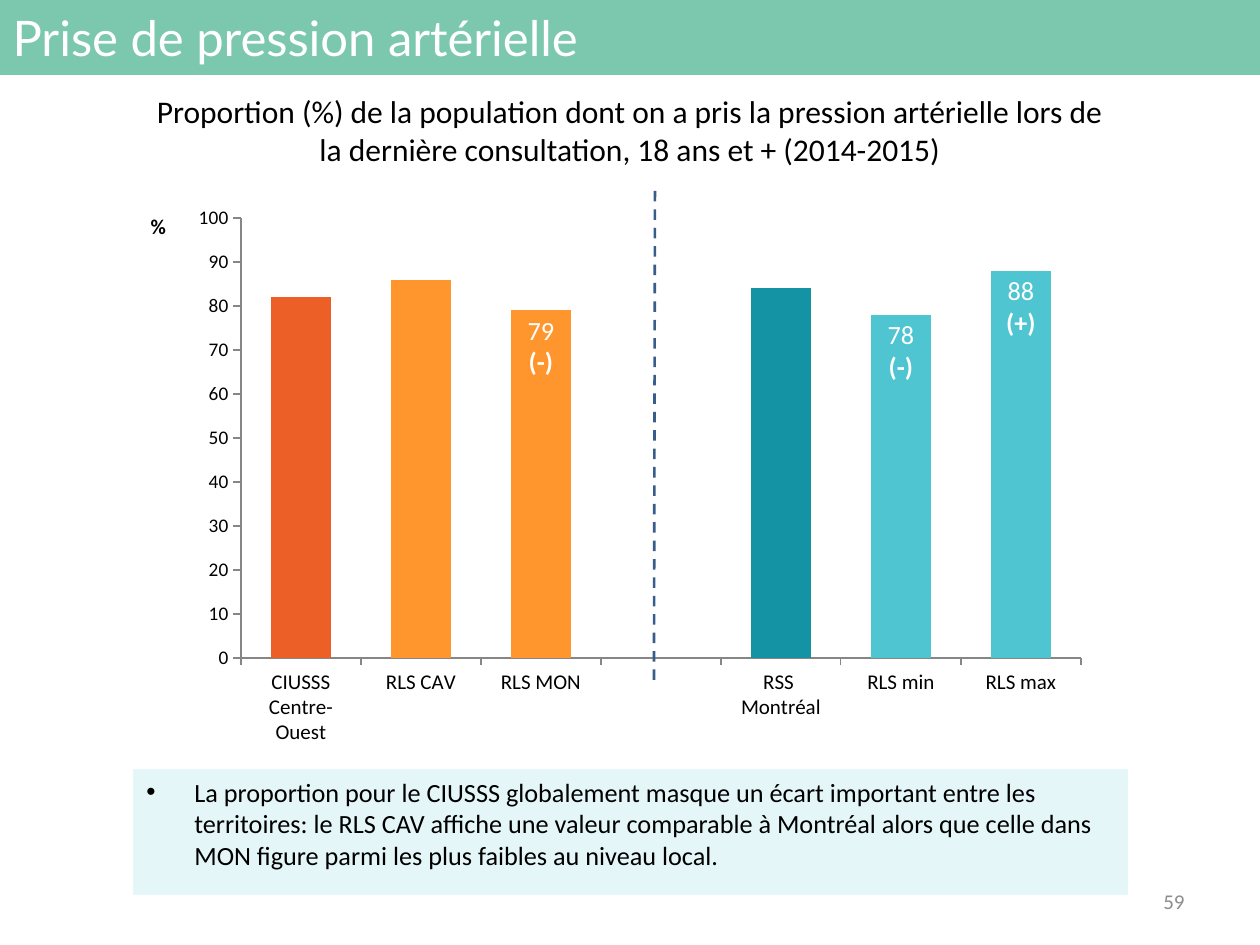
from lxml import etree
from pptx import Presentation
from pptx.chart.data import CategoryChartData
from pptx.dml.color import RGBColor
from pptx.enum.chart import XL_CHART_TYPE, XL_LABEL_POSITION, XL_TICK_MARK
from pptx.enum.dml import MSO_LINE
from pptx.enum.shapes import MSO_CONNECTOR, MSO_SHAPE
from pptx.enum.text import MSO_ANCHOR, PP_ALIGN
from pptx.oxml.ns import qn
from pptx.util import Emu, Pt

EMU_PER_PX = 914400 / 126

GREEN = RGBColor(0x7B, 0xC8, 0xAF)
PALE_BLUE = RGBColor(0xE4, 0xF6, 0xF8)
WHITE = RGBColor(0xFF, 0xFF, 0xFF)
BLACK = RGBColor(0x00, 0x00, 0x00)
GREY = RGBColor(0x8C, 0x8C, 0x8C)
AXIS_GREY = RGBColor(0x86, 0x86, 0x86)
NAVY = RGBColor(0x38, 0x5D, 0x8A)
RED_ORANGE = RGBColor(0xEC, 0x60, 0x28)
ORANGE = RGBColor(0xFF, 0x96, 0x2D)
TEAL = RGBColor(0x14, 0x93, 0xA4)
LIGHT_TEAL = RGBColor(0x4F, 0xC5, 0xD1)

# category, value, bar colour, significance mark
BARS = [
    ("CIUSSS\nCentre-Ouest", 82, RED_ORANGE, None),
    ("RLS CAV", 86, ORANGE, None),
    ("RLS MON", 79, ORANGE, "(-)"),
    ("", None, None, None),
    ("RSS \nMontréal", 84, TEAL, None),
    ("RLS min", 78, LIGHT_TEAL, "(-)"),
    ("RLS max", 88, LIGHT_TEAL, "(+)"),
]


def px(*values):
    return [Emu(round(v * EMU_PER_PX)) for v in values]


def style_font(font, size, color=BLACK, bold=False, name="Calibri"):
    for key, value in {"size": Pt(size), "bold": bold, "name": name}.items():
        setattr(font, key, value)
    font.color.rgb = color


def fill_box(s, color):
    s.fill.solid()
    s.fill.fore_color.rgb = color
    s.line.color.rgb = color
    s.line.width = Pt(0.75)


def write_lines(tf, lines, align, size, color=BLACK, name="Calibri"):
    tf.word_wrap = True
    for i, line in enumerate(lines):
        p = tf.paragraphs[0] if i == 0 else tf.add_paragraph()
        p.alignment = align
        r = p.add_run()
        r.text = line
        style_font(r.font, size, color, name=name)


def add_title(slide, box):
    s = slide.shapes.title
    s.left, s.top, s.width, s.height = px(*box)
    fill_box(s, GREEN)
    s.text_frame.vertical_anchor = MSO_ANCHOR.MIDDLE
    write_lines(s.text_frame, ["Prise de pression artérielle"],
                PP_ALIGN.LEFT, 28, WHITE, "Lato")


def add_text(slide, box, lines, align, size, color=BLACK, anchor=MSO_ANCHOR.TOP):
    tf = slide.shapes.add_textbox(*px(*box)).text_frame
    tf.vertical_anchor = anchor
    write_lines(tf, lines, align, size, color)


def add_comment(slide, box):
    s = slide.shapes.add_shape(MSO_SHAPE.RECTANGLE, *px(*box))
    s.shadow.inherit = False
    fill_box(s, PALE_BLUE)
    s.text_frame.vertical_anchor = MSO_ANCHOR.TOP
    write_lines(s.text_frame, [
        "La proportion pour le CIUSSS globalement masque un écart important "
        "entre les territoires: le RLS CAV affiche une valeur comparable à "
        "Montréal alors que celle dans MON figure parmi les plus faibles au "
        "niveau local."], PP_ALIGN.LEFT, 15)
    p = s.text_frame.paragraphs[0]
    p.space_before, p.space_after = Pt(4), Pt(10)
    indent, = px(48)
    pPr = p._p.get_or_add_pPr()
    pPr.set("marL", str(indent))
    pPr.set("indent", str(-indent))
    etree.SubElement(pPr, qn("a:buFont"), typeface="Arial")
    etree.SubElement(pPr, qn("a:buChar"), char="•")


def set_layout(parent, box, values, inner=False):
    """Place a chart part at values (px) inside the chart box, after its tx if any."""
    for old in parent.findall(qn("c:layout")):
        parent.remove(old)
    layout = etree.Element(qn("c:layout"))
    manual = etree.SubElement(layout, qn("c:manualLayout"))
    if inner:
        etree.SubElement(manual, qn("c:layoutTarget"), val="inner")
    for mode in ("xMode", "yMode"):
        etree.SubElement(manual, qn(f"c:{mode}"), val="edge")
    for key, value, size in zip("xywh", values, box[2:] * 2):
        etree.SubElement(manual, qn(f"c:{key}"), val=f"{value / size:.4f}")
    parent.insert(0 if parent.find(qn("c:tx")) is None else 1, layout)


def style_axis(axis, size):
    axis.has_major_gridlines = False
    axis.major_tick_mark = XL_TICK_MARK.OUTSIDE
    axis.minor_tick_mark = XL_TICK_MARK.NONE
    axis.format.line.color.rgb = AXIS_GREY
    axis.format.line.width = Pt(0.75)
    style_font(axis.tick_labels.font, size)


def style_value_axis(axis, box):
    style_axis(axis, 11)
    for key, value in {"minimum_scale": 0, "maximum_scale": 100,
                       "major_unit": 10}.items():
        setattr(axis, key, value)
    axis.tick_labels.number_format = "0"
    axis.tick_labels.number_format_is_linked = False
    tf = axis.axis_title.text_frame
    tf.text = "%"
    style_font(tf.paragraphs[0].runs[0].font, 12, bold=True)
    body = tf._txBody.find(qn("a:bodyPr"))
    body.set("rot", "0")
    body.set("vert", "horz")
    set_layout(axis.axis_title._element, box, (13, 13))


def style_bars(plot):
    plot.gap_width = 100
    plot.vary_by_categories = False
    plot.has_data_labels = True
    labels = plot.data_labels
    for key, value in {"show_value": True, "number_format": "0",
                       "number_format_is_linked": False,
                       "position": XL_LABEL_POSITION.INSIDE_END}.items():
        setattr(labels, key, value)
    style_font(labels.font, 15, WHITE, True)
    for i, (_, value, color, mark) in enumerate(BARS):
        if value is None:
            continue
        point = plot.series[0].points[i]
        point.format.fill.solid()
        point.format.fill.fore_color.rgb = color
        if mark:
            tf = point.data_label.text_frame
            tf.text = f"{value}\n{mark}"
            for p, bold in zip(tf.paragraphs, (False, True)):
                style_font(p.runs[0].font, 15, WHITE, bold)
            point.data_label.position = XL_LABEL_POSITION.INSIDE_END


def add_bar_chart(slide, box):
    data = CategoryChartData(number_format="0")
    data.categories = [bar[0] for bar in BARS]
    data.add_series("Proportion (%)", [bar[1] for bar in BARS])
    chart = slide.shapes.add_chart(
        XL_CHART_TYPE.COLUMN_CLUSTERED, *px(*box), data).chart
    chart.has_legend = chart.has_title = False
    style_font(chart.font, 10)
    style_axis(chart.category_axis, 12)
    style_value_axis(chart.value_axis, box)
    style_bars(chart.plots[0])
    plot_area = chart._chartSpace.chart.plotArea
    set_layout(plot_area, box, (107, 23, 840, 440), inner=True)


def add_divider(slide, ends):
    s = slide.shapes.add_connector(MSO_CONNECTOR.STRAIGHT, *px(*ends))
    s.line.color.rgb = NAVY
    s.line.width = Pt(1.5)
    s.line.dash_style = MSO_LINE.DASH
    etree.SubElement(s._element.spPr, qn("a:effectLst"))


def main():
    prs = Presentation()
    prs.slide_width, prs.slide_height = px(1260, 945)
    slide = prs.slides.add_slide(prs.slide_layouts[5])
    add_title(slide, (0, 0, 1260, 74))
    add_text(slide, (903, 876, 294, 50), ["59"], PP_ALIGN.RIGHT, 12, GREY,
             MSO_ANCHOR.MIDDLE)
    add_comment(slide, (134, 770, 993, 124))
    add_text(slide, (0, 86, 1260, 89), [
        "Proportion (%) de la population dont on a pris la pression artérielle lors de",
        "la dernière consultation, 18 ans et + (2014-2015)"], PP_ALIGN.CENTER, 18)
    add_bar_chart(slide, (134, 195, 968, 561))
    add_divider(slide, (654, 680, 655, 189))
    prs.save("out.pptx")


if __name__ == "__main__":
    main()
